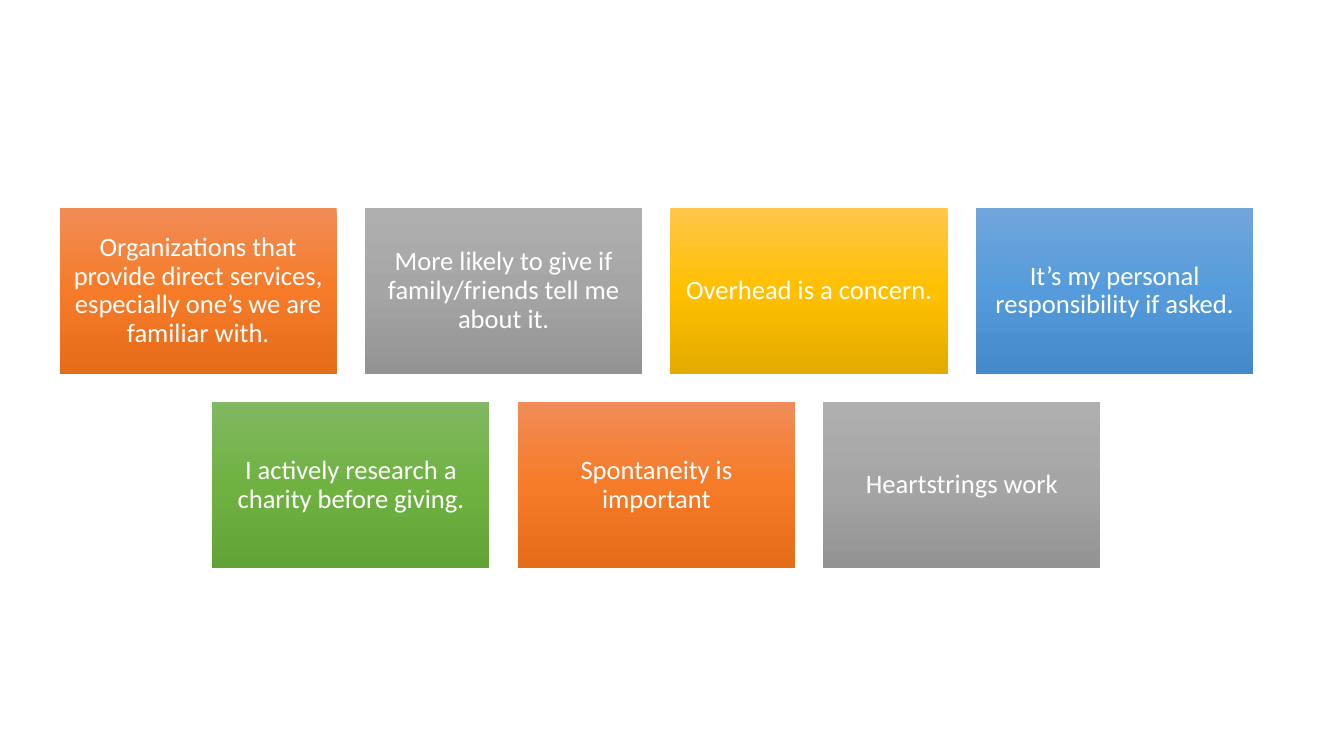
import copy

import pptx
import pptx.dml.color
import pptx.enum.shapes
import pptx.enum.text
import pptx.oxml.ns
import pptx.util

Inches = pptx.util.Inches
RGBColor = pptx.dml.color.RGBColor

WHITE = RGBColor(0xFF, 0xFF, 0xFF)
# Top, middle and bottom colour of each gradient
ORANGE = (RGBColor(0xF1, 0x8C, 0x57), RGBColor(0xF6, 0x7B, 0x28), RGBColor(0xE5, 0x6C, 0x19))
GRAY = (RGBColor(0xAF, 0xAF, 0xAF), RGBColor(0xA5, 0xA5, 0xA5), RGBColor(0x93, 0x93, 0x93))
GOLD = (RGBColor(0xFF, 0xC6, 0x4B), RGBColor(0xFF, 0xC0, 0x00), RGBColor(0xE3, 0xAB, 0x00))
BLUE = (RGBColor(0x71, 0xA6, 0xDB), RGBColor(0x55, 0x9B, 0xDB), RGBColor(0x44, 0x8A, 0xCA))
GREEN = (RGBColor(0x81, 0xB8, 0x61), RGBColor(0x6F, 0xB2, 0x42), RGBColor(0x62, 0xA3, 0x36))

CARD_WIDTH = Inches(2.75)
CARD_HEIGHT = Inches(1.65)
GAP = Inches(0.28)

CARD_ROWS = [
    [
        ("Organizations that provide direct services, especially one’s we are familiar with.", ORANGE),
        ("More likely to give if family/friends tell me about it.", GRAY),
        ("Overhead is a concern.", GOLD),
        ("It’s my personal responsibility if asked.", BLUE),
    ],
    [
        ("I actively research a charity before giving.", GREEN),
        ("Spontaneity is important", ORANGE),
        ("Heartstrings work", GRAY),
    ],
]


def fill_downward(shape, colors):
    """Fill the shape with evenly spaced gradient colours from top to bottom."""
    shape.fill.gradient()
    shape.fill.gradient_angle = 270
    stop_list = shape.element.spPr.find(".//" + pptx.oxml.ns.qn("a:gsLst"))
    while len(stop_list) < len(colors):
        stop_list.append(copy.deepcopy(stop_list[0]))
    for index, (stop, color) in enumerate(zip(shape.fill.gradient_stops, colors)):
        stop.position = index / (len(colors) - 1)
        stop.color.rgb = color


def add_card(page, left, top, text, colors):
    card = page.shapes.add_shape(
        pptx.enum.shapes.MSO_SHAPE.RECTANGLE, left, top, CARD_WIDTH, CARD_HEIGHT
    )
    card.shadow.inherit = False
    card.line.fill.background()
    fill_downward(card, colors)

    frame = card.text_frame
    frame.word_wrap = True
    frame.vertical_anchor = pptx.enum.text.MSO_ANCHOR.MIDDLE
    frame.margin_left = frame.margin_right = Inches(0.08)
    frame.margin_top = frame.margin_bottom = Inches(0.08)

    para = frame.paragraphs[0]
    para.alignment = pptx.enum.text.PP_ALIGN.CENTER
    para.line_spacing = 0.9
    span = para.add_run()
    span.text = text
    span.font.name = "Calibri"
    span.font.size = pptx.util.Pt(19)
    span.font.color.rgb = WHITE


def add_card_grid(page, left, top, width):
    """Place the rows of cards, each row centred in the given width."""
    for row, cards in enumerate(CARD_ROWS):
        row_width = len(cards) * (CARD_WIDTH + GAP) - GAP
        row_left = left + (width - row_width) // 2
        row_top = top + row * (CARD_HEIGHT + GAP)
        for column, (text, colors) in enumerate(cards):
            add_card(page, row_left + column * (CARD_WIDTH + GAP), row_top, text, colors)


def main():
    deck = pptx.Presentation()
    deck.slide_width = Inches(13.33)
    deck.slide_height = Inches(7.5)
    page = deck.slides.add_slide(deck.slide_layouts[6])
    add_card_grid(page, Inches(0.6), Inches(2.06), Inches(11.82))
    deck.save("out.pptx")


if __name__ == "__main__":
    main()
